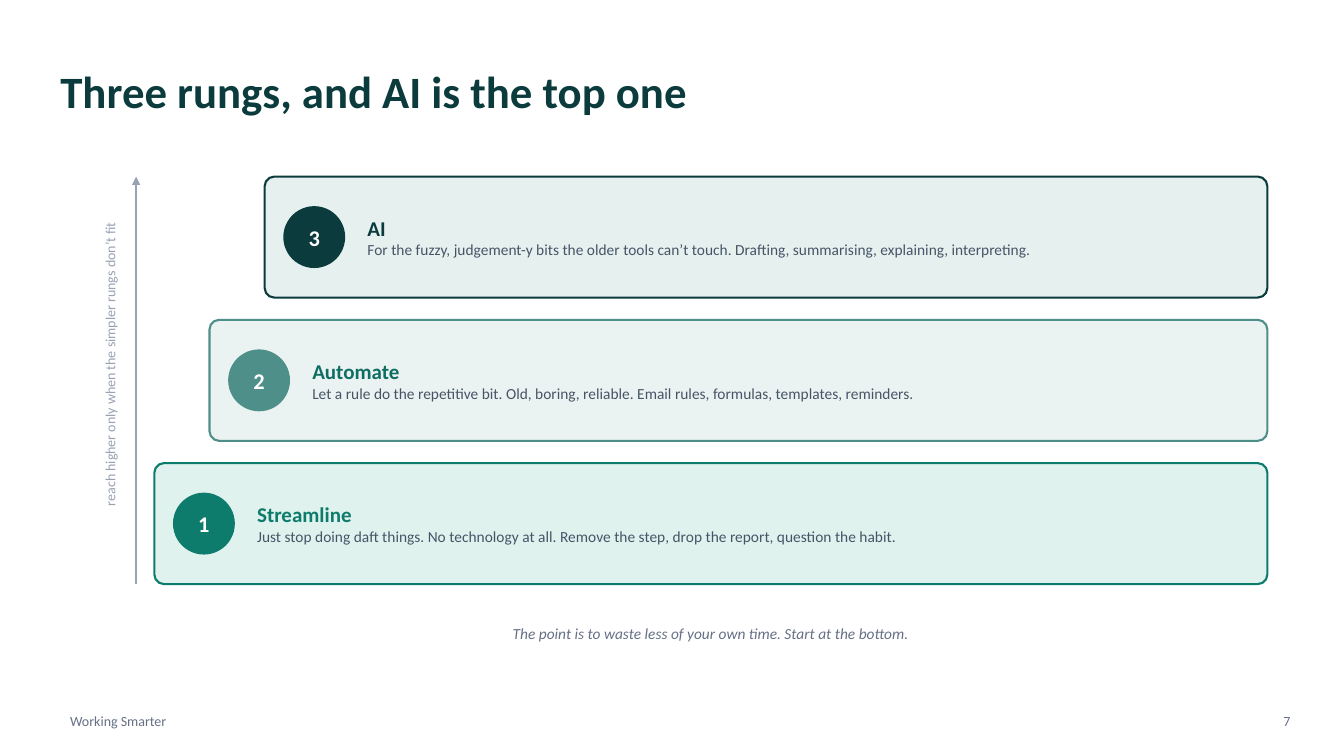
from lxml import etree
from pptx import Presentation, util as u
from pptx.dml.color import RGBColor
from pptx.enum import shapes, text
from pptx.oxml.ns import qn
from pptx.util import Cm

FONT = "Calibri"
DARK = RGBColor(0x0B, 0x3B, 0x3C)
SAGE = RGBColor(0x4F, 0x8F, 0x89)
TEAL = RGBColor(0x0F, 0x6E, 0x63)
GREEN = RGBColor(0x0E, 0x7C, 0x6C)
DARK_TINT = RGBColor(0xE6, 0xF1, 0xEF)
SAGE_TINT = RGBColor(0xEA, 0xF3, 0xF1)
GREEN_TINT = RGBColor(0xE0, 0xF2, 0xEE)
BODY = RGBColor(0x47, 0x54, 0x67)
MUTED = RGBColor(0x66, 0x70, 0x85)
PALE = RGBColor(0x98, 0xA2, 0xB3)
WHITE = RGBColor(0xFF, 0xFF, 0xFF)
LEFT, CENTER, RIGHT = text.PP_ALIGN.LEFT, text.PP_ALIGN.CENTER, text.PP_ALIGN.RIGHT


def write(shape, lines, align=LEFT, inset=True, italic=False):
    """Fill a shape with lines of (wording, size, colour, bold)."""
    frame = shape.text_frame
    frame.text = "\n".join(line[0] for line in lines)
    frame.word_wrap = True
    frame.auto_size = text.MSO_AUTO_SIZE.NONE
    frame.vertical_anchor = text.MSO_ANCHOR.MIDDLE
    if not inset:
        frame.margin_left = frame.margin_right = 0
        frame.margin_top = frame.margin_bottom = 0
    for paragraph, (_, size, colour, bold) in zip(frame.paragraphs, lines):
        paragraph.alignment = align
        font = paragraph.runs[0].font
        font.name, font.size, font.bold, font.italic = FONT, u.Pt(size), bold, italic
        font.color.rgb = colour


def add_filled(kind, left, top, width, height, fill):
    shape = slide.shapes.add_shape(kind, Cm(left), Cm(top), Cm(width), Cm(height))
    shape.shadow.inherit = False
    shape.fill.solid()
    shape.fill.fore_color.rgb = fill
    shape.line.fill.background()
    return shape


deck = Presentation()
deck.slide_width, deck.slide_height = Cm(33.87), Cm(19.05)
slide = deck.slides.add_slide(deck.slide_layouts[5])

# Title
title = slide.shapes.title
title.left, title.top, title.width, title.height = Cm(1.52), Cm(1.14), Cm(30.73), Cm(2.29)
write(title, [("Three rungs, and AI is the top one", 32, DARK, True)], inset=False)

# Footer and page number
footer = slide.shapes.add_textbox(Cm(1.52), Cm(17.78), Cm(10.16), Cm(0.76))
write(footer, [("Working Smarter", 10, MUTED, False)])
page_number = slide.shapes.add_textbox(Cm(31.5), Cm(17.78), Cm(1.27), Cm(0.76))
write(page_number, [("7", 10, MUTED, False)], RIGHT)

# Rungs, top to bottom: each lower one starts further left
RUNGS = [
    ("3", "AI", "For the fuzzy, judgement-y bits the older tools can’t touch. "
     "Drafting, summarising, explaining, interpreting.", DARK, DARK, DARK_TINT),
    ("2", "Automate", "Let a rule do the repetitive bit. Old, boring, reliable. "
     "Email rules, formulas, templates, reminders.", SAGE, TEAL, SAGE_TINT),
    ("1", "Streamline", "Just stop doing daft things. No technology at all. "
     "Remove the step, drop the report, question the habit.", GREEN, GREEN, GREEN_TINT),
]
LADDER_LEFT, LADDER_RIGHT, LADDER_TOP = 3.89, 31.94, 4.45
INDENT, STEP, RUNG_HEIGHT, BADGE = 1.39, 3.61, 3.05, 1.56

for row, (number, heading, detail, accent, heading_colour, tint) in enumerate(RUNGS):
    left = LADDER_LEFT + INDENT * (len(RUNGS) - 1 - row)
    top = LADDER_TOP + STEP * row
    rung = add_filled(shapes.MSO_SHAPE.ROUNDED_RECTANGLE, left, top,
                      LADDER_RIGHT - left, RUNG_HEIGHT, tint)
    rung.adjustments[0] = 0.08
    rung.line.color.rgb = accent
    rung.line.width = u.Pt(1.5)

    badge = add_filled(shapes.MSO_SHAPE.OVAL, left + 0.47,
                       top + (RUNG_HEIGHT - BADGE) / 2, BADGE, BADGE, accent)
    write(badge, [(number, 16, WHITE, True)], CENTER)

    label_left = left + 2.59
    label = slide.shapes.add_textbox(Cm(label_left), Cm(top),
                                     Cm(LADDER_RIGHT - label_left), Cm(RUNG_HEIGHT))
    write(label, [(heading, 15, heading_colour, True), (detail, 11, BODY, False)],
          inset=False)

# Upward arrow with its rotated caption
arrow = slide.shapes.add_connector(shapes.MSO_CONNECTOR.STRAIGHT,
                                   Cm(3.43), Cm(14.72), Cm(3.43), Cm(LADDER_TOP))
arrow.line.color.rgb = PALE
arrow.line.width = u.Pt(1.25)
etree.SubElement(arrow.line._get_or_add_ln(), qn("a:tailEnd"), type="triangle")
etree.SubElement(arrow._element.spPr, qn("a:effectLst"))

caption = slide.shapes.add_textbox(Cm(-1.96), Cm(8.7), Cm(9.45), Cm(0.96))
caption.rotation = 270
write(caption, [("reach higher only when the simpler rungs don’t fit", 10, PALE, False)],
      CENTER, inset=False)

# Closing line
takeaway = slide.shapes.add_textbox(Cm(LADDER_LEFT), Cm(15.35),
                                    Cm(LADDER_RIGHT - LADDER_LEFT), Cm(1.24))
write(takeaway, [("The point is to waste less of your own time. Start at the bottom.",
                  11, MUTED, False)], CENTER, italic=True)

deck.save("out.pptx")
